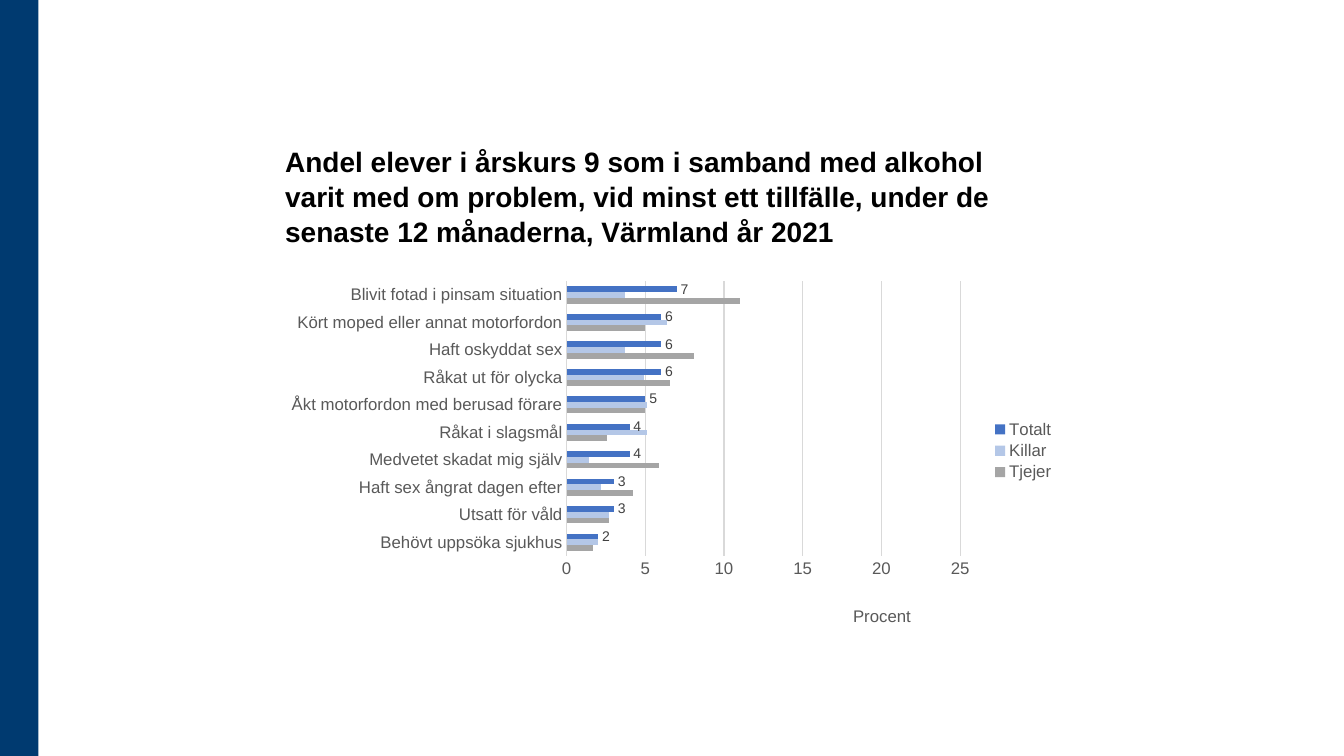
"""Build a slide with a bar chart of alcohol-related problems among pupils in Värmland."""
import lxml.etree
import pptx
import pptx.chart.data
import pptx.dml.color
import pptx.enum.chart
import pptx.enum.shapes
import pptx.enum.text
import pptx.oxml.ns
import pptx.util
from dataclasses import dataclass
from pptx.util import Inches

TITLE_LINES = [
    "Andel elever i årskurs 9 som i samband med alkohol",
    "varit med om problem, vid minst ett tillfälle, under de senaste 12 månaderna, Värmland år 2021",
]
AXIS_TITLE = "Procent"
SERIES_NAMES = ("Tjejer", "Killar", "Totalt")
PROBLEMS = [
    ("Behövt uppsöka sjukhus", 1.7, 2, 2),
    ("Utsatt för våld", 2.7, 2.7, 3),
    ("Haft sex ångrat dagen efter", 4.2, 2.2, 3),
    ("Medvetet skadat mig själv", 5.9, 1.4, 4),
    ("Råkat i slagsmål", 2.6, 5.1, 4),
    ("Åkt motorfordon med berusad förare", 5, 5.1, 5),
    ("Råkat ut för olycka", 6.6, 4.9, 6),
    ("Haft oskyddat sex", 8.1, 3.7, 6),
    ("Kört moped eller annat motorfordon", 5, 6.4, 6),
    ("Blivit fotad i pinsam situation", 11, 3.7, 7),
]


@dataclass(frozen=True)
class Theme:
    font: str = "Arial"
    band: str = "003A70"
    title: str = "000000"
    text: str = "595959"
    label: str = "404040"
    grid: str = "D9D9D9"
    series: tuple = ("A5A5A5", "B4C7E7", "4472C4")
    title_size: int = 20
    text_size: int = 12
    label_size: int = 10


THEME = Theme()


def color(value):
    return pptx.dml.color.RGBColor.from_string(value)


def style_font(font, size, value, bold=False):
    font.name = THEME.font
    font.size = pptx.util.Pt(size)
    font.bold = bold
    font.color.rgb = color(value)


def style_line(line):
    line.color.rgb = color(THEME.grid)
    line.width = pptx.util.Pt(0.75)


def place(element, index, inner=False, **fractions):
    qn = pptx.oxml.ns.qn
    for old in element.findall(qn("c:layout")):
        element.remove(old)
    layout = lxml.etree.Element(qn("c:layout"))
    manual = lxml.etree.SubElement(layout, qn("c:manualLayout"))
    settings = {"layoutTarget": "inner"} if inner else {}
    settings.update(xMode="edge", yMode="edge", **fractions)
    for name, value in settings.items():
        lxml.etree.SubElement(manual, qn("c:" + name)).set("val", str(value))
    element.insert(index, layout)


def add_band(slide, height):
    band = slide.shapes.add_shape(
        pptx.enum.shapes.MSO_SHAPE.RECTANGLE, 0, 0, Inches(0.38), height)
    band.shadow.inherit = False
    band.fill.solid()
    band.fill.fore_color.rgb = color(THEME.band)
    band.line.fill.background()


def add_title(slide):
    box = slide.shapes.add_textbox(Inches(2.73), Inches(1.06), Inches(7.87), Inches(1.45))
    frame = box.text_frame
    frame.word_wrap = True
    frame.vertical_anchor = pptx.enum.text.MSO_ANCHOR.BOTTOM
    paragraph = frame.paragraphs[0]
    paragraph.line_spacing = 1.04
    for number, line in enumerate(TITLE_LINES):
        if number:
            paragraph.add_line_break()
        run = paragraph.add_run()
        run.text = line
        style_font(run.font, THEME.title_size, THEME.title, True)


def style_axes(chart):
    category_axis, value_axis = chart.category_axis, chart.value_axis
    for axis in (category_axis, value_axis):
        axis.major_tick_mark = pptx.enum.chart.XL_TICK_MARK.NONE
        axis.minor_tick_mark = pptx.enum.chart.XL_TICK_MARK.NONE
        style_font(axis.tick_labels.font, THEME.text_size, THEME.text)
    style_line(category_axis.format.line)
    value_axis.format.line.fill.background()
    value_axis.minimum_scale = 0
    value_axis.maximum_scale = 25
    value_axis.major_unit = 5
    value_axis.has_major_gridlines = True
    style_line(value_axis.major_gridlines.format.line)
    value_axis.tick_labels.number_format = "0"
    value_axis.tick_labels.number_format_is_linked = False
    title = value_axis.axis_title
    run = title.text_frame.paragraphs[0].add_run()
    run.text = AXIS_TITLE
    style_font(run.font, THEME.text_size, THEME.text)
    place(title._element, 1, x=0.73, y=0.92)


def style_series(plot):
    plot.gap_width = 182
    plot.overlap = 0
    plot.vary_by_categories = False
    for series, fill in zip(plot.series, THEME.series):
        series.format.fill.solid()
        series.format.fill.fore_color.rgb = color(fill)
        series.invert_if_negative = False
    labels = plot.series[-1].data_labels
    labels.show_value = True
    labels.number_format = "0"
    labels.number_format_is_linked = False
    labels.position = pptx.enum.chart.XL_LABEL_POSITION.OUTSIDE_END
    style_font(labels.font, THEME.label_size, THEME.label)


def add_problem_chart(slide):
    categories, *columns = zip(*PROBLEMS)
    data = pptx.chart.data.CategoryChartData()
    data.categories = categories
    for name, values in zip(SERIES_NAMES, columns):
        data.add_series(name, values)
    chart = slide.shapes.add_chart(
        pptx.enum.chart.XL_CHART_TYPE.BAR_CLUSTERED,
        Inches(2.73), Inches(2.72), Inches(7.81), Inches(3.54), data).chart
    style_font(chart.font, THEME.text_size, THEME.title)
    chart.has_title = False
    style_axes(chart)
    style_series(chart.plots[0])
    place(chart._chartSpace.chart.plotArea, 0, True, x=0.37, y=0.02, w=0.5, h=0.77)
    chart.has_legend = True
    legend = chart.legend
    legend.position = pptx.enum.chart.XL_LEGEND_POSITION.RIGHT
    legend.include_in_layout = False
    style_font(legend.font, THEME.text_size, THEME.text)
    place(legend._element, 1, x=0.9, y=0.4, w=0.1, h=0.19)


def main():
    presentation = pptx.Presentation()
    presentation.slide_width = Inches(13.33)
    presentation.slide_height = Inches(7.5)
    slide = presentation.slides.add_slide(presentation.slide_layouts[6])
    add_band(slide, presentation.slide_height)
    add_title(slide)
    add_problem_chart(slide)
    presentation.save("out.pptx")


if __name__ == "__main__":
    main()
